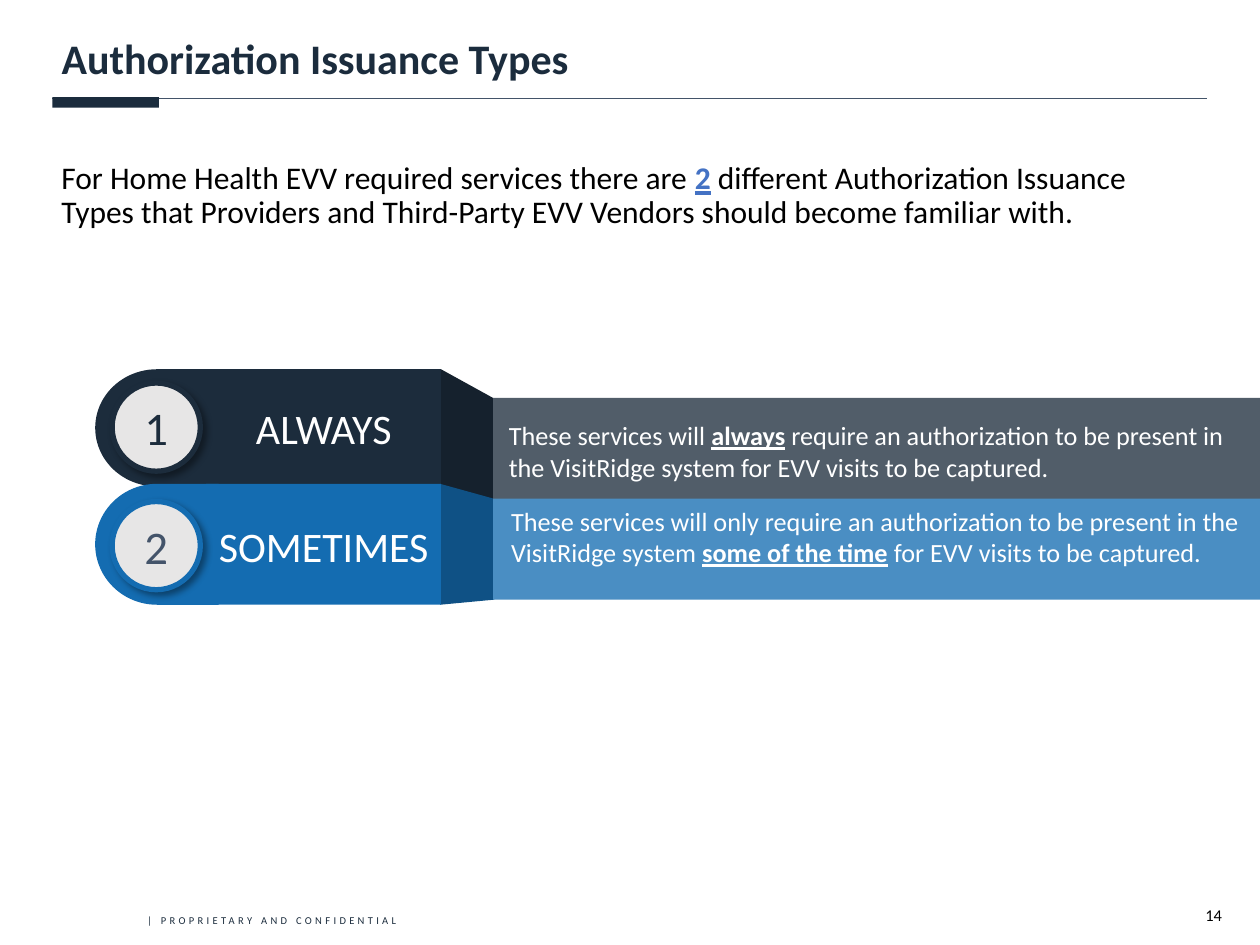
from dataclasses import dataclass

from lxml import etree
from pptx import Presentation
from pptx import util as u
from pptx.dml.color import RGBColor
from pptx.enum import shapes, text
from pptx.oxml.ns import qn
from pptx.slide import Slide

Pt = u.Pt
Kind = shapes.MSO_SHAPE
Align = text.PP_ALIGN
Anchor = text.MSO_ANCHOR

NAVY, BLUE, WHITE, BLACK = "1C2C3C", "146CB1", "FFFFFF", "000000"
HEADING, LINK = "1B2C3D", "4472C4"


def rgb(value):
    return RGBColor.from_string(value)


@dataclass
class SlideBuilder:
    slide: Slide
    font: str = "Calibri"

    def set_text(self, shape, runs, size, color, align=Align.LEFT, anchor=Anchor.TOP,
                 margins=(7.2, 3.6), bold=False, line_spacing=None):
        frame = shape.text_frame
        frame.word_wrap = True
        frame.auto_size = text.MSO_AUTO_SIZE.NONE
        frame.vertical_anchor = anchor
        frame.margin_left = frame.margin_right = Pt(margins[0])
        frame.margin_top = frame.margin_bottom = Pt(margins[1])
        paragraph = frame.paragraphs[0]
        paragraph.alignment = align
        paragraph.line_spacing = line_spacing
        font = paragraph.font
        font.name, font.size, font.bold = self.font, Pt(size), bold
        font.color.rgb = rgb(color)
        for words, emphasis in runs:
            run = paragraph.add_run()
            run.text = words
            if emphasis:
                run.font.bold = run.font.underline = True
                run.font.color.rgb = rgb(emphasis)
        return paragraph

    def title(self, words, box):
        shape = self.slide.shapes.title
        shape.left, shape.top, shape.width, shape.height = map(Pt, box)
        self.set_text(shape, [(words, None)], 24, HEADING, anchor=Anchor.MIDDLE,
                      bold=True, line_spacing=0.9)

    def label(self, runs, box, size, color, **style):
        shape = self.slide.shapes.add_textbox(*map(Pt, box))
        return self.set_text(shape, runs, size, color, **style)

    def paint(self, shape, fill, line=None, width=1):
        shape.shadow.inherit = False
        shape.fill.solid()
        shape.fill.fore_color.rgb = rgb(fill)
        if line:
            shape.line.color.rgb = rgb(line)
            shape.line.width = Pt(width)
        else:
            shape.line.fill.background()
        return shape

    def block(self, kind, box, fill, line=None, width=1, mirrored=False):
        shape = self.slide.shapes.add_shape(kind, *map(Pt, box))
        if mirrored:
            shape.element.spPr.xfrm.set("flipH", "1")
        return self.paint(shape, fill, line, width)

    def polygon(self, points, fill):
        builder = self.slide.shapes.build_freeform(
            Pt(points[0][0]), Pt(points[0][1]), scale=1.0)
        builder.add_line_segments([(Pt(x), Pt(y)) for x, y in points[1:]], close=True)
        return self.paint(builder.convert_to_shape(), fill)

    def rule(self, left, right, y, color, width):
        line = self.slide.shapes.add_connector(
            shapes.MSO_CONNECTOR.STRAIGHT, Pt(left), Pt(y), Pt(right), Pt(y))
        line.line.color.rgb = rgb(color)
        line.line.width = Pt(width)
        etree.SubElement(line.element.spPr, qn("a:effectLst"))

    def badge(self, number, top, ring, color):
        shape = self.block(Kind.OVAL, (64.1, top, 50.4, 50.4), "E7E6E6", ring, 3)
        effects = shape.element.spPr.find(qn("a:effectLst"))
        shadow = etree.SubElement(effects, qn("a:outerShdw"), blurRad=str(Pt(4)),
                                  dist=str(Pt(3)), dir="2700000", algn="tl", rotWithShape="0")
        shade = etree.SubElement(shadow, qn("a:srgbClr"), val=BLACK)
        etree.SubElement(shade, qn("a:alpha"), val="40000")
        self.set_text(shape, [(number, None)], 26.7, color, Align.CENTER, Anchor.MIDDLE)

    def tab(self, name, number, top, height, color, number_color, badge_top, name_top):
        self.block(Kind.FLOWCHART_DELAY, (54.4, top, 70.6, height), color, mirrored=True)
        self.block(Kind.RECTANGLE, (117.7, top, 134.3, height), color)
        self.badge(number, badge_top, color, number_color)
        self.label([(name, None)], (118, name_top, 134, 36), 24, WHITE,
                   align=Align.CENTER, anchor=Anchor.MIDDLE, margins=(0, 3.6))

    def bar(self, box, fill, runs, text_box):
        self.block(Kind.RECTANGLE, box, fill)
        self.label(runs, text_box, 15, WHITE)


def main():
    presentation = Presentation()
    presentation.slide_width, presentation.slide_height = Pt(720), Pt(540)
    slide = presentation.slides.add_slide(presentation.slide_layouts[5])
    page = SlideBuilder(slide)

    page.title("Authorization Issuance Types", (28, 12.2, 621, 45.4))
    page.rule(30, 690, 56.2, "435469", 0.5)
    page.block(Kind.RECTANGLE, (30, 55.6, 60.9, 6), HEADING)
    footer = page.label([("| PROPRIETARY AND CONFIDENTIAL", None)],
                        (77, 519, 212, 14.4), 6, HEADING)
    footer.runs[0].font._element.set("spc", "190")
    page.label([("14", None)], (674, 517, 39, 11.5), 9.4, BLACK,
               align=Align.CENTER, margins=(0, 0))
    page.label([("For Home Health EVV required services there are ", None), ("2", LINK),
                (" different Authorization Issuance Types that Providers and "
                 "Third-Party EVV Vendors should become familiar with.", None)],
               (28, 89.3, 664.6, 46.8), 18, BLACK, line_spacing=0.9)

    page.block(Kind.FLOWCHART_MANUAL_INPUT, (252, 211, 32.4, 89.3), "15212D", mirrored=True)
    page.tab("ALWAYS", "1", 211, 67, NAVY, NAVY, 218.9, 226.6)
    page.polygon([(251.5, 276.5), (282.5, 285.1), (282.5, 342.7), (251.5, 345.6)], "0F5185")
    page.tab("SOMETIMES", "2", 276.5, 69.1, BLUE, "44546A", 286.6, 294)
    page.bar((281.8, 227.4, 438.2, 58), "515D69",
             [("These services will ", None), ("always", WHITE),
              (" require an authorization to be present in the VisitRidge system "
               "for EVV visits to be captured.", None)],
             (283.7, 236.2, 436.3, 44))
    page.bar((281.8, 285, 438.2, 57.7), "4A8EC3",
             [("These services will only require an authorization to be present in the "
               "VisitRidge system ", None), ("some of the time", WHITE),
              (" for EVV visits to be captured.", None)],
             (285, 285.1, 432, 57.6))

    presentation.save("out.pptx")


if __name__ == "__main__":
    main()
